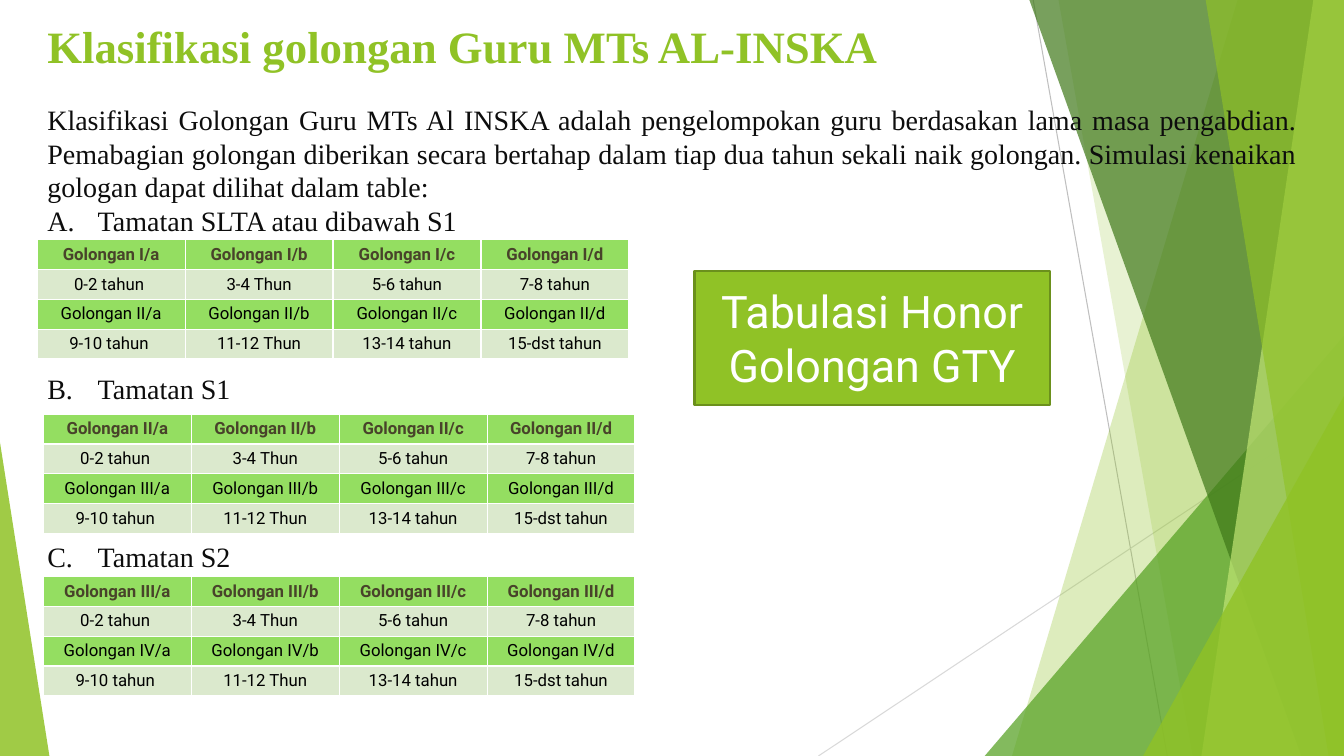
"""Build the slide on teacher grades at MTs AL-INSKA."""
import lxml.etree
import pptx
import pptx.dml.color
import pptx.enum.shapes
import pptx.enum.text
import pptx.oxml.ns
import pptx.util

Pt = pptx.util.Pt
RGBColor = pptx.dml.color.RGBColor
Align = pptx.enum.text.PP_ALIGN
Anchor = pptx.enum.text.MSO_ANCHOR
Shape = pptx.enum.shapes.MSO_SHAPE
qn = pptx.oxml.ns.qn

WIDE, HIGH, TOP = 960, 540, -0.6
LEFT = 26.6
SERIF, SANS = "Times New Roman", "Roboto"

GREEN = RGBColor(0x90, 0xC2, 0x26)
LEAF = RGBColor(0x54, 0xA0, 0x21)
MOSS = RGBColor(0x3F, 0x78, 0x19)
LIME = RGBColor(0xC0, 0xE4, 0x74)
OLIVE = RGBColor(0x6B, 0x90, 0x1C)
BRIGHT = RGBColor(0x94, 0xDE, 0x61)
PALE = RGBColor(0xDB, 0xE9, 0xCD)
BROWN = RGBColor(0x48, 0x43, 0x2A)
INK = RGBColor(0x0D, 0x0D, 0x0D)
BLACK = RGBColor(0x00, 0x00, 0x00)
WHITE = RGBColor(0xFF, 0xFF, 0xFF)
GREY = RGBColor(0xBF, 0xBF, 0xBF)
SILVER = RGBColor(0xD9, 0xD9, 0xD9)

INTRO = (
    "Klasifikasi Golongan Guru MTs Al INSKA adalah pengelompokan guru "
    "berdasakan lama masa pengabdian. Pemabagian golongan diberikan secara "
    "bertahap dalam tiap dua tahun sekali naik golongan. Simulasi kenaikan "
    "gologan dapat dilihat dalam table:"
)
HEADS = [("Tamatan SLTA atau dibawah S1", 0), ("Tamatan S1", 96), ("Tamatan S2", 96)]
EARLY = ["0-2 tahun ", "3-4 Thun", "5-6 tahun", "7-8 tahun"]
LATER = ["9-10 tahun ", "11-12 Thun", "13-14 tahun", "15-dst tahun"]
GRIDS = [(LEFT, 171.2, "I", "II"), (31, 295.9, "II", "III"), (31, 411.8, "III", "IV")]


def place(shape, left, top, width, height):
    shape.left, shape.top = Pt(left), Pt(top)
    shape.width, shape.height = Pt(width), Pt(height)


def style(para, face, size, color, align, bold=False):
    para.alignment = align
    para.font.name, para.font.size = face, Pt(size)
    para.font.color.rgb, para.font.bold = color, bold


def tint(shape, color, alpha):
    shape.shadow.inherit = False
    shape.line.fill.background()
    shape.fill.solid()
    shape.fill.fore_color.rgb = color
    mark = shape.element.spPr.find(qn("a:solidFill")).find(qn("a:srgbClr"))
    lxml.etree.SubElement(mark, qn("a:alpha"), val=str(alpha * 1000))


def add_line(slide, start, end, color):
    ends = [Pt(v) for v in (*start, *end)]
    line = slide.shapes.add_connector(pptx.enum.shapes.MSO_CONNECTOR.STRAIGHT, *ends)
    line.line.color.rgb, line.line.width = color, Pt(0.75)
    lxml.etree.SubElement(line.element.spPr, qn("a:effectLst"))


def add_panel(slide, head, foot, color, alpha):
    pen = slide.shapes.build_freeform(Pt(head), Pt(TOP))
    edge = [(WIDE, TOP), (WIDE, HIGH), (foot, HIGH)]
    pen.add_line_segments([(Pt(x), Pt(y)) for x, y in edge])
    tint(pen.convert_to_shape(), color, alpha)


def add_wedge(slide, left, top, width, peak, color, alpha):
    box = [Pt(v) for v in (left, top, width, HIGH - top)]
    wedge = slide.shapes.add_shape(Shape.ISOSCELES_TRIANGLE, *box)
    wedge.adjustments[0] = peak
    tint(wedge, color, alpha)


def add_scene(slide):
    add_line(slide, (738, 0), (833.8, HIGH), GREY)
    add_line(slide, (WIDE, 290.2), (584.6, HIGH), SILVER)
    add_panel(slide, 884.2, 722.9, GREEN, 30)
    add_panel(slide, 756, 851.8, GREEN, 20)
    add_wedge(slide, 703.4, 239.8, 256.6, 1, LEAF, 72)
    add_panel(slide, 735.1, 929.5, MOSS, 70)
    add_panel(slide, 938.2, 858.2, LIME, 70)
    add_panel(slide, 861.1, 949, GREEN, 65)
    add_wedge(slide, 816.5, 283, 143.5, 1, GREEN, 80)
    add_wedge(slide, 0, 316.1, 35.3, 0, GREEN, 85)


def raise_up(slide, holder):
    slide.shapes.element.append(holder.element)
    holder.text_frame.word_wrap = True
    holder.text_frame.auto_size = pptx.enum.text.MSO_AUTO_SIZE.NONE
    holder.text_frame.vertical_anchor = Anchor.TOP


def fill_title(slide):
    title = slide.shapes.title
    raise_up(slide, title)
    place(title, LEFT, 9.4, 853.9, 33.8)
    title.text_frame.text = "Klasifikasi golongan Guru MTs AL-INSKA"
    style(title.text_frame.paragraphs[0], SERIF, 32, GREEN, Align.LEFT, True)


def add_para(para, text, gap, indent, mark, **kind):
    para.text = text
    para.line_spacing, para.space_before = Pt(24), Pt(gap)
    props = para._p.get_or_add_pPr()
    props.set("marL", str(Pt(indent)))
    props.set("indent", str(Pt(-indent)))
    lxml.etree.SubElement(props, qn(mark), **kind)
    style(para, SERIF, 20, INK, Align.JUSTIFY)


def fill_body(slide):
    body = slide.placeholders[1]
    raise_up(slide, body)
    place(body, LEFT, 69.8, 907.2, 452.2)
    frame = body.text_frame
    add_para(frame.paragraphs[0], INTRO, 0, 0, "a:buNone")
    for text, gap in HEADS:
        add_para(frame.add_paragraph(), text, gap, 36, "a:buAutoNum", type="alphaUcPeriod")


def add_grid(slide, left, top, first, second):
    box = [Pt(v) for v in (left, top, 422.6, 85)]
    table = slide.shapes.add_table(4, 4, *box).table
    ranks = [[f"Golongan {rank}/{step}" for step in "abcd"] for rank in (first, second)]
    for row, texts in enumerate([ranks[0], EARLY, ranks[1], LATER]):
        for col, text in enumerate(texts):
            cell = table.cell(row, col)
            cell.text = text
            cell.fill.solid()
            cell.fill.fore_color.rgb = PALE if row % 2 else BRIGHT
            color = BLACK if row else BROWN
            style(cell.text_frame.paragraphs[0], SANS, 12, color, Align.CENTER, row == 0)


def add_button(slide):
    box = [Pt(v) for v in (496.1, 193.7, 253.9, 95.4)]
    button = slide.shapes.add_shape(Shape.RECTANGLE, *box)
    button.shadow.inherit = False
    button.fill.solid()
    button.fill.fore_color.rgb = GREEN
    button.line.color.rgb, button.line.width = OLIVE, Pt(1.5)
    button.text_frame.word_wrap = True
    button.text_frame.vertical_anchor = Anchor.MIDDLE
    button.text_frame.text = "Tabulasi Honor\nGolongan GTY"
    for para in button.text_frame.paragraphs:
        style(para, SANS, 32, WHITE, Align.CENTER)


def main():
    deck = pptx.Presentation()
    deck.slide_width, deck.slide_height = Pt(WIDE), Pt(HIGH)
    slide = deck.slides.add_slide(deck.slide_layouts[1])
    add_scene(slide)
    fill_title(slide)
    fill_body(slide)
    for grid in GRIDS:
        add_grid(slide, *grid)
    add_button(slide)
    deck.save("out.pptx")


if __name__ == "__main__":
    main()
